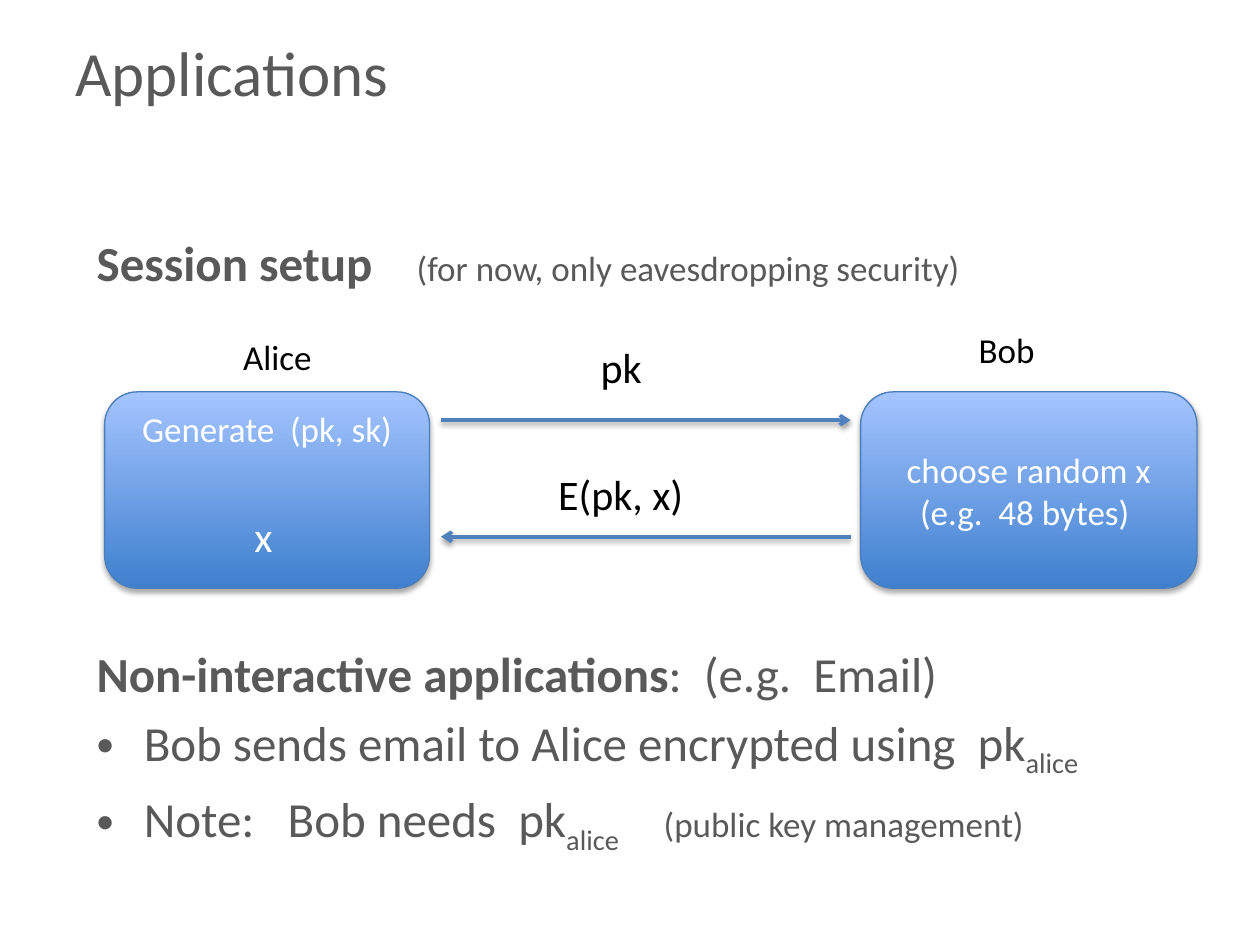
from pptx import Presentation
from pptx.util import Cm, Pt
from pptx.dml.color import RGBColor
from pptx.enum.shapes import MSO_SHAPE, MSO_CONNECTOR
from pptx.enum.text import PP_ALIGN, MSO_ANCHOR
from pptx.oxml import parse_xml
from pptx.oxml.ns import qn
from lxml.etree import SubElement

HUES = {"grey": "595959", "black": "000000", "white": "FFFFFF", "line": "4F81BD",
        "edge": "4B7EBC", "low": "3F80CE", "high": "A4C4FF"}
FONT = "Calibri"
NS = "http://schemas.openxmlformats.org/drawingml/2006/main"

TITLE = [[("Applications", {})]]
SETUP = [[("Session setup", {"bold": True}),
          ("\t(for now, only eavesdropping security)", {"size": 20})]]
NOTES = [
    [("Non-interactive applications", {"bold": True}), (":  (e.g.  Email)", {})],
    [("Bob sends email to Alice encrypted using  pk", {}), ("alice", {"sub": True})],
    [("Note:   Bob needs  pk", {}), ("alice", {"sub": True}),
     ("\t(public key management)", {"size": 20})],
]
BLOCKS = [
    (TITLE, (1.27, 0.56, 22.86, 3.18), {"size": 36}),
    (SETUP, (1.7, 4.57, 22.86, 1.5), {"size": 28, "tab": 6.45}),
    (NOTES, (1.7, 12.85, 22.86, 5), {"size": 28, "tab": 11.43, "gap": 5.6, "dots": True}),
]
TOP, HIGH = 7.9, 3.96
BOXES = [
    (2.11, 6.55, ["Generate  (pk, sk)"], MSO_ANCHOR.TOP),
    (17.35, 6.78, ["choose random x", "(e.g.  48 bytes) "], MSO_ANCHOR.MIDDLE),
]
LABELS = [
    ("Alice", (4.65, 6.63, 1.98, 1.12), 20, "black"),
    ("Bob", (19.48, 6.5, 1.73, 1.12), 20, "black"),
    ("pk", (11.86, 6.76, 1.45, 1.27), 24, "black"),
    ("E(pk, x)", (11, 9.32, 3.5, 1.27), 24, "black"),
    ("x", (4.88, 10.16, 0.94, 1.27), 24, "white"),
]
LEFT, RIGHT = 8.89, 17.15
ARROWS = [(LEFT, RIGHT, 8.47), (RIGHT, LEFT, 10.82)]


def tint(name):
    return RGBColor.from_string(HUES[name])


def shade(shape, alpha, blur, dist):
    props = shape._element.spPr
    for old in props.findall(qn("a:effectLst")):
        props.remove(old)
    props.append(parse_xml(
        f'<a:effectLst xmlns:a="{NS}"><a:outerShdw blurRad="{Pt(blur)}" '
        f'dist="{Pt(dist)}" dir="5400000" rotWithShape="0"><a:srgbClr val="{HUES["black"]}">'
        f'<a:alpha val="{alpha * 1000}"/></a:srgbClr></a:outerShdw></a:effectLst>'))


def write(frame, paras, size=20, hue="grey", align=PP_ALIGN.LEFT,
          anchor=MSO_ANCHOR.TOP, wrap=True, tab=None, gap=0, dots=False):
    frame.word_wrap = wrap
    frame.vertical_anchor = anchor
    for num, runs in enumerate(paras):
        para = frame.add_paragraph() if num else frame.paragraphs[0]
        para.alignment = align
        para.space_before = Pt(gap if num else 0)
        props = para._p.get_or_add_pPr()
        if dots and num:
            props.set("marL", str(Cm(0.95)))
            props.set("indent", str(Cm(-0.95)))
            SubElement(props, qn("a:buFont"), typeface="Arial")
            SubElement(props, qn("a:buChar"), char="•")
        if tab:
            tabs = SubElement(props, qn("a:tabLst"))
            SubElement(tabs, qn("a:tab"), pos=str(Cm(tab)), algn="l")
        for text, form in runs:
            run = para.add_run()
            run.text = text
            font = run.font
            font.name, font.size = FONT, Pt(form.get("size", size))
            font.bold = form.get("bold", False)
            font.color.rgb = tint(hue)
            if form.get("sub"):
                run._r.get_or_add_rPr().set("baseline", "-25000")


deck = Presentation()
deck.slide_width, deck.slide_height = Cm(25.4), Cm(19.05)
slide = deck.slides.add_slide(deck.slide_layouts[6])
shapes = slide.shapes

for paras, place, form in BLOCKS:
    write(shapes.add_textbox(*map(Cm, place)).text_frame, paras, **form)

for left, wide, lines, anchor in BOXES:
    box = shapes.add_shape(MSO_SHAPE.ROUNDED_RECTANGLE, *map(Cm, (left, TOP, wide, HIGH)))
    box.fill.gradient()
    box.fill.gradient_angle = 90
    for stop, name in zip(box.fill.gradient_stops, ("low", "high")):
        stop.color.rgb = tint(name)
    box.line.color.rgb = tint("edge")
    box.line.width = Pt(0.75)
    shade(box, 35, 3.1, 1.8)
    write(box.text_frame, [[(line, {})] for line in lines],
          hue="white", align=PP_ALIGN.CENTER, anchor=anchor)

for start, end, y in ARROWS:
    arrow = shapes.add_connector(MSO_CONNECTOR.STRAIGHT, Cm(start), Cm(y), Cm(end), Cm(y))
    arrow.line.color.rgb = tint("line")
    arrow.line.width = Pt(2)
    SubElement(arrow.line._get_or_add_ln(), qn("a:tailEnd"), type="arrow")
    shade(arrow, 38, 3.1, 1.6)

for text, place, size, hue in LABELS:
    label = shapes.add_textbox(*map(Cm, place))
    write(label.text_frame, [[(text, {})]], size=size, hue=hue, wrap=False)

deck.save("out.pptx")
